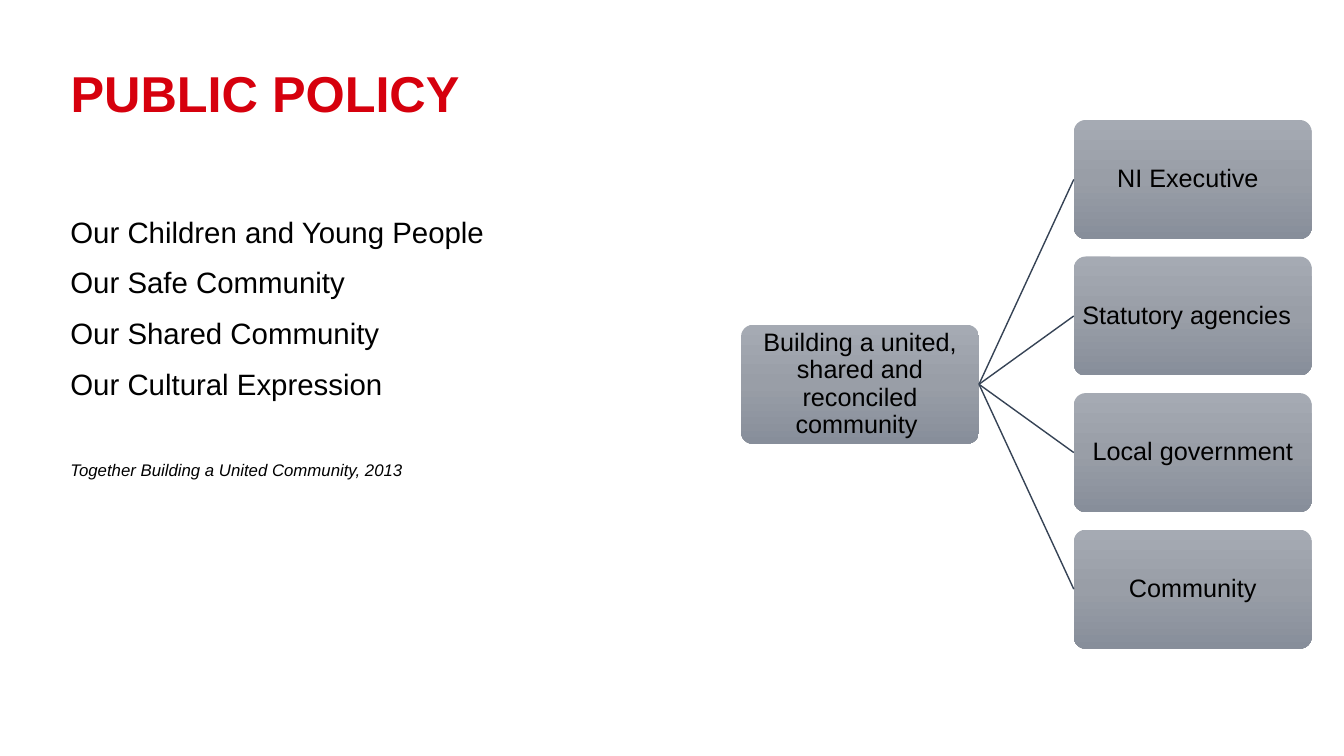
"""Builds the public policy slide with its themes and its partner tree."""
from copy import deepcopy

from lxml import etree
from pptx import Presentation
from pptx import util as u
from pptx.dml.color import RGBColor
from pptx.enum import shapes, text
from pptx.oxml.ns import qn

COLOURS = {"title": "D6000D", "text": "000000", "link": "364355",
           "top": "A5AAB3", "middle": "999EA7", "bottom": "878E9A"}
BOX_WIDTH, BOX_HEIGHT, BOX_STEP = 2.36, 1.18, 1.355
ROOT_LEFT, PARTNER_LEFT, PARTNER_TOP = 7.35, 10.65, 1.19

THEMES = ["Our Children and Young People", "Our Safe Community",
          "Our Shared Community", "Our Cultural Expression"]
REPORT = "Together Building a United Community, 2013"
GOAL = "Building a united, shared and reconciled community "
PARTNERS = ["NI Executive\t", "Statutory agencies\t", "Local government", "Community"]


def rgb(name):
    """Return the named colour."""
    return RGBColor.from_string(COLOURS[name])


def apply(target, values):
    """Set every attribute listed in values on target."""
    for name, value in values.items():
        setattr(target, name, value)


class PolicySlide:
    """Holds the text style and the current slide."""

    font = {"name": "Arial", "bold": False, "italic": False}

    def __init__(self, deck):
        """Add a title-only slide to the deck."""
        self.slide = deck.slides.add_slide(deck.slide_layouts[5])

    def wording(self, paragraph, words, size, colour="text", layout=None, **font):
        """Fill and format one paragraph."""
        paragraph.text = words
        apply(paragraph, layout or {})
        apply(paragraph.font, {**self.font, "size": u.Pt(size), **font})
        paragraph.font.color.rgb = rgb(colour)

    def title(self, words, left, top, width, height):
        """Place and format the title."""
        heading = self.slide.shapes.title
        apply(heading, {"left": u.Inches(left), "top": u.Inches(top),
                        "width": u.Inches(width), "height": u.Inches(height)})
        apply(heading.text_frame, {"vertical_anchor": text.MSO_ANCHOR.TOP,
                                   "word_wrap": True,
                                   "auto_size": text.MSO_AUTO_SIZE.NONE})
        self.wording(heading.text_frame.paragraphs[0], words, 36, "title",
                     {"alignment": text.PP_ALIGN.LEFT, "line_spacing": 0.9}, bold=True)

    def themes(self, lines, report, left, top, width, height):
        """Add the list of themes with the report it comes from."""
        frame = self.slide.shapes.add_textbox(
            *map(u.Inches, (left, top, width, height))).text_frame
        frame.word_wrap = True
        for index, line in enumerate(lines):
            paragraph = frame.add_paragraph() if index else frame.paragraphs[0]
            self.wording(paragraph, line, 21,
                         layout={"space_before": u.Pt(11 if index else 0)})
        self.wording(frame.add_paragraph(), report, 12,
                     layout={"space_before": u.Pt(42)}, italic=True)

    def box(self, words, left, top):
        """Add a shaded rounded box with centred words."""
        box = self.slide.shapes.add_shape(
            shapes.MSO_SHAPE.ROUNDED_RECTANGLE,
            *map(u.Inches, (left, top, BOX_WIDTH, BOX_HEIGHT)))
        box.adjustments[0] = 0.1
        box.shadow.inherit = False
        box.line.fill.background()
        self.shade(box)
        margins = dict.fromkeys(("margin_left", "margin_top", "margin_right",
                                 "margin_bottom"), u.Inches(0.05))
        apply(box.text_frame, {"word_wrap": True, **margins,
                               "vertical_anchor": text.MSO_ANCHOR.MIDDLE})
        self.wording(box.text_frame.paragraphs[0], words, 18,
                     layout={"alignment": text.PP_ALIGN.CENTER, "line_spacing": 0.9})
        return box

    def shade(self, box):
        """Fill a box with the three-stop vertical gradient."""
        box.fill.gradient()
        box.fill.gradient_angle = 270
        stops = next(box._element.spPr.iter(qn("a:gsLst")))
        middle = deepcopy(stops[0])
        middle.set("pos", "50000")
        stops.insert(1, middle)
        for stop, name in zip(box.fill.gradient_stops, ("top", "middle", "bottom")):
            stop.color.rgb = rgb(name)

    def link(self, root, partner):
        """Join the right side of root to the left side of partner."""
        link = self.slide.shapes.add_connector(
            shapes.MSO_CONNECTOR.STRAIGHT, 0, 0, 0, 0)
        link.begin_connect(root, 3)
        link.end_connect(partner, 1)
        link.line.width = u.Pt(1)
        link.line.color.rgb = rgb("link")
        etree.SubElement(link._element.spPr, qn("a:effectLst"))


def main():
    """Build and save the deck."""
    deck = Presentation()
    apply(deck, {"slide_width": u.Inches(13.33), "slide_height": u.Inches(7.5)})
    policy = PolicySlide(deck)
    policy.title("PUBLIC POLICY", 0.6, 0.63, 6.12, 1.09)
    policy.themes(THEMES, REPORT, 0.6, 2.07, 6.54, 3.51)
    root_top = PARTNER_TOP + BOX_STEP * (len(PARTNERS) - 1) / 2
    goal = policy.box(GOAL, ROOT_LEFT, root_top)
    for row, name in enumerate(PARTNERS):
        partner = policy.box(name, PARTNER_LEFT, PARTNER_TOP + row * BOX_STEP)
        policy.link(goal, partner)
    deck.save("out.pptx")


if __name__ == "__main__":
    main()
